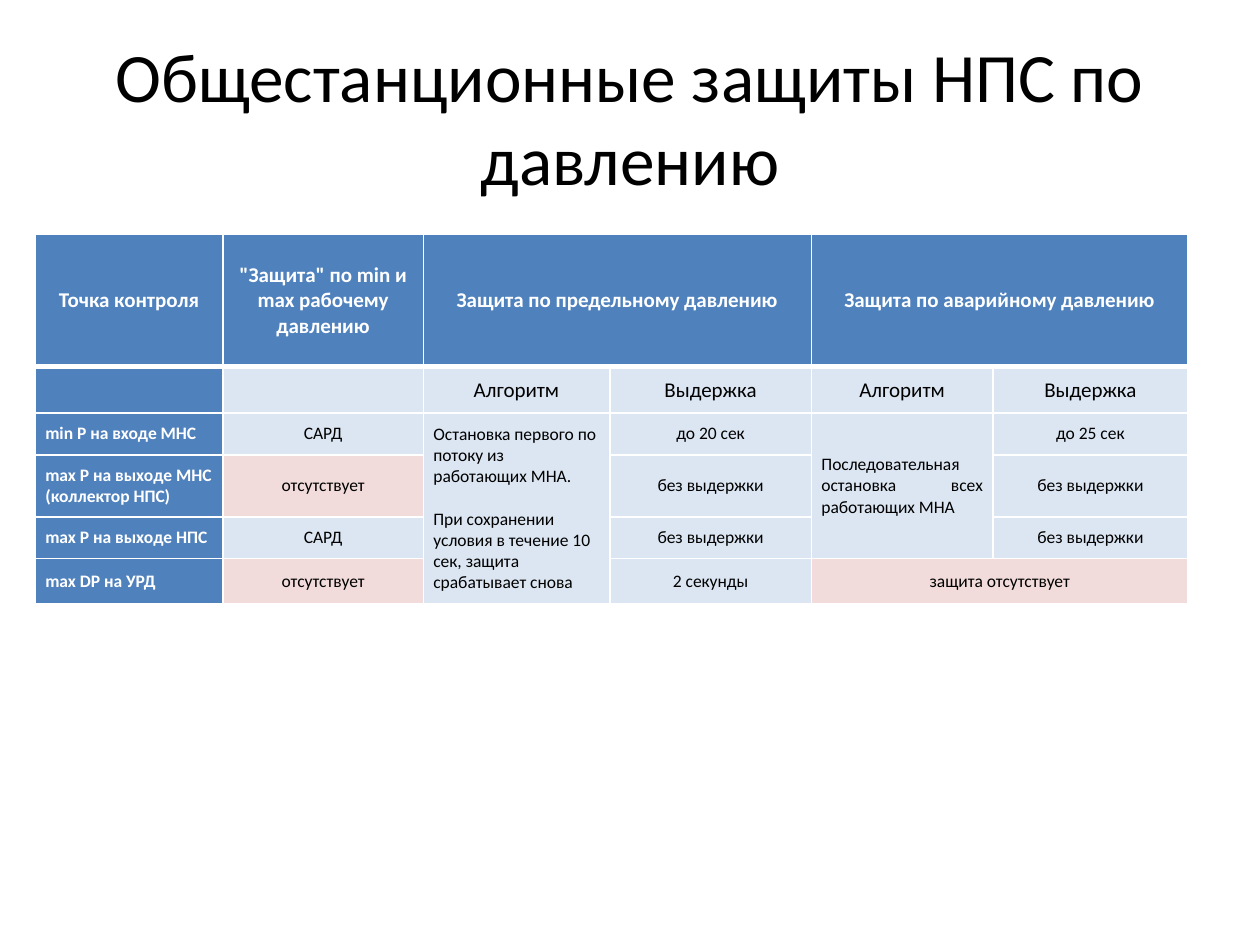
from pptx import Presentation
from pptx.dml.color import RGBColor
from pptx.enum.text import MSO_ANCHOR, PP_ALIGN
from pptx.oxml.ns import qn
from pptx.util import Inches, Pt
from lxml import etree

LEFT, CENTER, JUSTIFY = PP_ALIGN.LEFT, PP_ALIGN.CENTER, PP_ALIGN.JUSTIFY
MIDDLE = MSO_ANCHOR.MIDDLE

BLACK = RGBColor(0x00, 0x00, 0x00)
WHITE = RGBColor(0xFF, 0xFF, 0xFF)
BLUE = RGBColor(0x4F, 0x81, 0xBD)
PALE_BLUE = RGBColor(0xDC, 0xE6, 0xF2)
PINK = RGBColor(0xF2, 0xDC, 0xDB)
FONT = "Calibri"

COLUMN_WIDTHS = (1.49, 1.59, 1.48, 1.6, 1.44, 1.55)
ROW_HEIGHTS = (1.05, 0.37, 0.33, 0.49, 0.33, 0.36)
CELL_MARGIN = Inches(0.08)

# Cell text by row; a line break starts a new paragraph
ROWS = (
    ("Точка контроля", "\"Защита\" по min и max рабочему давлению",
     "Защита по предельному давлению", "", "Защита по аварийному давлению", ""),
    ("", "", "Алгоритм", "Выдержка", "Алгоритм", "Выдержка"),
    ("min P на входе МНС", "САРД",
     "Остановка первого по потоку из работающих МНА.\n"
     "При сохранении условия в течение 10 сек, защита срабатывает снова",
     "до 20 сек", "Последовательная остановка всех работающих МНА", "до 25 сек"),
    ("max P на выходе МНС (коллектор НПС)", "отсутствует", "",
     "без выдержки", "", "без выдержки"),
    ("max P на выходе НПС", "САРД", "", "без выдержки", "", "без выдержки"),
    ("max DP на УРД", "отсутствует", "", "2 секунды", "защита отсутствует", ""),
)
# First and last cell of each merged area
MERGES = (((0, 2), (0, 3)), ((0, 4), (0, 5)), ((2, 2), (5, 2)),
          ((2, 4), (4, 4)), ((5, 4), (5, 5)))
ALGORITHM_ALIGNMENTS = {(2, 2): LEFT, (2, 4): JUSTIFY}


def add_text(text_frame, text, size, color, bold=False, alignment=CENTER):
    for index, line in enumerate(text.split("\n")):
        paragraph = text_frame.add_paragraph() if index else text_frame.paragraphs[0]
        paragraph.alignment = alignment
        if index:
            paragraph.space_before = Pt(12)
        run = paragraph.add_run()
        run.text = line
        run.font.name = FONT
        run.font.size = Pt(size)
        run.font.bold = bold
        run.font.color.rgb = color


def set_borders(cell, top, bottom):
    properties = cell._tc.get_or_add_tcPr()
    for tag, width in (("a:lnL", 1), ("a:lnR", 1), ("a:lnT", top), ("a:lnB", bottom)):
        line = etree.SubElement(properties, qn(tag), w=str(Pt(width)))
        fill = etree.SubElement(line, qn("a:solidFill"))
        etree.SubElement(fill, qn("a:srgbClr"), val=str(WHITE))


def style_cell(cell, row, column, text):
    is_header = row == 0
    is_label = is_header or column == 0
    set_borders(cell, top=3 if row == 1 else 1, bottom=3 if is_header else 1)

    cell.fill.solid()
    if is_label:
        cell.fill.fore_color.rgb = BLUE
    else:
        cell.fill.fore_color.rgb = PINK if "отсутствует" in text else PALE_BLUE

    cell.vertical_anchor = MIDDLE
    cell.margin_left = cell.margin_right = CELL_MARGIN
    cell.margin_top = cell.margin_bottom = CELL_MARGIN if text else 0
    if text:
        default = LEFT if column == 0 and not is_header else CENTER
        add_text(cell.text_frame, text, 12 if row < 2 else 10,
                 WHITE if is_label else BLACK, is_label,
                 ALGORITHM_ALIGNMENTS.get((row, column), default))


def add_title(slide, left, top, width, height):
    box = slide.shapes.add_textbox(left, top, width, height)
    box.text_frame.word_wrap = True
    box.text_frame.vertical_anchor = MIDDLE
    add_text(box.text_frame, "Общестанционные защиты НПС по давлению", 39.6, BLACK)


def add_protection_table(slide, left, top, width, height):
    frame = slide.shapes.add_table(len(ROWS), len(COLUMN_WIDTHS), left, top, width, height)
    table = frame.table
    for column, share in zip(table.columns, COLUMN_WIDTHS):
        column.width = int(width * share / sum(COLUMN_WIDTHS))
    for row, share in zip(table.rows, ROW_HEIGHTS):
        row.height = int(height * share / sum(ROW_HEIGHTS))
    for row, texts in enumerate(ROWS):
        for column, text in enumerate(texts):
            style_cell(table.cell(row, column), row, column, text)
    for first, last in MERGES:
        table.cell(*first).merge(table.cell(*last))


def main():
    presentation = Presentation()
    presentation.slide_width = Inches(10)
    presentation.slide_height = Inches(7.5)
    slide = presentation.slides.add_slide(presentation.slide_layouts[6])

    # Title
    add_title(slide, Inches(0.5), Inches(0.3), Inches(9), Inches(1.25))
    # Table of protections
    add_protection_table(slide, Inches(0.28), Inches(1.86),
                         Inches(sum(COLUMN_WIDTHS)), Inches(sum(ROW_HEIGHTS)))
    presentation.save("out.pptx")


if __name__ == "__main__":
    main()
